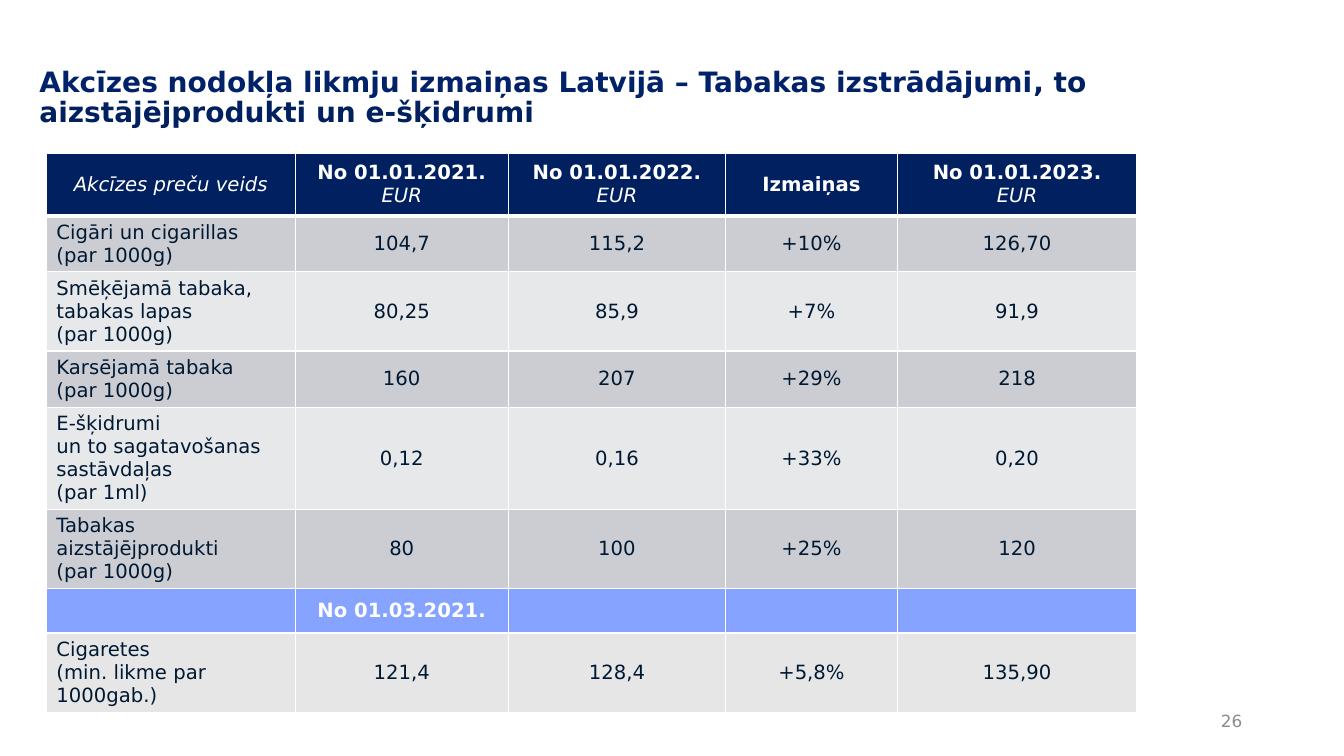
"""Build a slide with a table of Latvian excise duty rates for tobacco products."""
import pptx
import pptx.dml.color
import pptx.enum.text
import pptx.oxml
import pptx.oxml.ns
import pptx.util

RGB = pptx.dml.color.RGBColor.from_string
ALIGN = pptx.enum.text.PP_ALIGN
ANCHOR = pptx.enum.text.MSO_ANCHOR

THEME = {
    "font": "DejaVu Sans",
    "fills": {"header": "002060", "dark": "CCCDD2", "light": "E7E8EA",
              "period": "85A3FF", "last": "E7E6E6"},
    "border": "FFFFFF",
    "styles": {
        "title": ("012269", {"size": 20, "bold": True, "italic": False}),
        "title_end": ("002060", {"size": 20, "bold": True, "italic": False}),
        "strong": ("FFFFFF", {"size": 14, "bold": True, "italic": False}),
        "unit": ("FFFFFF", {"size": 14, "bold": False, "italic": True}),
        "body": ("001933", {"size": 14, "bold": False, "italic": False}),
        "number": ("8C8C90", {"size": 12, "bold": False, "italic": False}),
    },
}


def write(tf, paragraphs, align, spacing=None):
    for i, runs in enumerate(paragraphs):
        p = tf.paragraphs[0] if i == 0 else tf.add_paragraph()
        p.alignment = align
        p.line_spacing = spacing
        for text, style in runs:
            r = p.add_run()
            r.text = text
            color, values = THEME["styles"][style]
            for name, value in values.items():
                setattr(r.font, name, pptx.util.Pt(value) if name == "size" else value)
            r.font.name = THEME["font"]
            r.font.color.rgb = RGB(color)


def draw_borders(cell, widths):
    tc_pr = cell._tc.get_or_add_tcPr()
    for side, width in widths.items():
        tc_pr.append(pptx.oxml.parse_xml(
            f'<a:ln{side} {pptx.oxml.ns.nsdecls("a")} w="{pptx.util.Pt(width)}">'
            f'<a:solidFill><a:srgbClr val="{THEME["border"]}"/></a:solidFill></a:ln{side}>'))


prs = pptx.Presentation()
prs.slide_width = pptx.util.Inches(13.33)
prs.slide_height = pptx.util.Inches(7.5)
col, row = prs.slide_width / 100, prs.slide_height / 100
s = prs.slides.add_slide(prs.slide_layouts[5])

title = s.shapes.title
title_box = {"left": 2.18 * col, "top": 5.33 * row, "width": 86.27 * col, "height": 19.33 * row}
for name, value in title_box.items():
    setattr(title, name, int(value))
tf = title.text_frame
title_format = {"word_wrap": True, "vertical_anchor": ANCHOR.MIDDLE,
                "auto_size": pptx.enum.text.MSO_AUTO_SIZE.NONE,
                "margin_bottom": int(4.53 * row)}
for name, value in title_format.items():
    setattr(tf, name, value)
write(tf, [[("Akcīzes nodokļa likmju izmaiņas Latvijā – Tabakas izstrādājumi", "title"),
            (", to aizstājējprodukti un e-šķidrumi", "title_end")]], ALIGN.LEFT, 0.9)

header = [[[("Akcīzes preču veids", "unit")]],
          *[[[(f"No 01.01.{year}.", "strong")], [("EUR", "unit")]] for year in (2021, 2022, 2023)]]
header.insert(3, [[("Izmaiņas", "strong")]])

rates = [
    ("dark", 7.07, ["Cigāri un cigarillas", "(par 1000g)"], "104,7", "115,2", "+10%", "126,70"),
    ("light", 10, ["Smēķējamā tabaka,", "tabakas lapas", "(par 1000g)"],
     "80,25", "85,9", "+7%", "91,9"),
    ("dark", 7.07, ["Karsējamā tabaka", "(par 1000g)"], "160", "207", "+29%", "218"),
    ("light", 12.93, ["E-šķidrumi", "un to sagatavošanas sastāvdaļas", "(par 1ml)"],
     "0,12", "0,16", "+33%", "0,20"),
    ("dark", 10, ["Tabakas aizstājējprodukti", "(par 1000g)"], "80", "100", "+25%", "120"),
    ("period", 5.87, [], "No 01.03.2021.", "", "", ""),
    ("last", 10, ["Cigaretes", "(min. likme par 1000gab.)"], "121,4", "128,4", "+5,8%", "135,90"),
]

table_rows = [("header", 8.27, header)]
for kind, height, product, *values in rates:
    style = "strong" if kind == "period" else "body"
    cells = [[[(line, style)] for line in product]]
    cells += [[[(value, style)]] if value else [] for value in values]
    table_rows.append((kind, height, cells))

widths = [18.53, 15.83, 16.2, 12.75, 17.85]
frame = s.shapes.add_table(len(table_rows), len(widths), int(3.45 * col), int(20.27 * row),
                           int(sum(widths) * col), int(sum(h for _, h, _ in table_rows) * row))
table = frame.table
table.horz_banding = False
for c, width in enumerate(widths):
    table.columns[c].width = int(width * col)
for i, (kind, height, cells) in enumerate(table_rows):
    table.rows[i].height = int(height * row)
    for c, paragraphs in enumerate(cells):
        cell = table.cell(i, c)
        product_name = c == 0 and kind != "header"
        top = product_name and kind != "last"
        cell.vertical_anchor = ANCHOR.TOP if top else ANCHOR.MIDDLE
        draw_borders(cell, {"L": 1, "R": 1, "T": 3 if i == 1 else 1, "B": 3 if i == 0 else 1})
        cell.fill.solid()
        cell.fill.fore_color.rgb = RGB(THEME["fills"][kind])
        write(cell.text_frame, paragraphs, ALIGN.LEFT if product_name else ALIGN.CENTER)

sp = s.shapes.add_textbox(int(70.67 * col), int(92.67 * row), int(22.5 * col), int(5.33 * row))
sp.text_frame.word_wrap = True
sp.text_frame.vertical_anchor = ANCHOR.MIDDLE
write(sp.text_frame, [[("26", "number")]], ALIGN.RIGHT)

prs.save("out.pptx")
